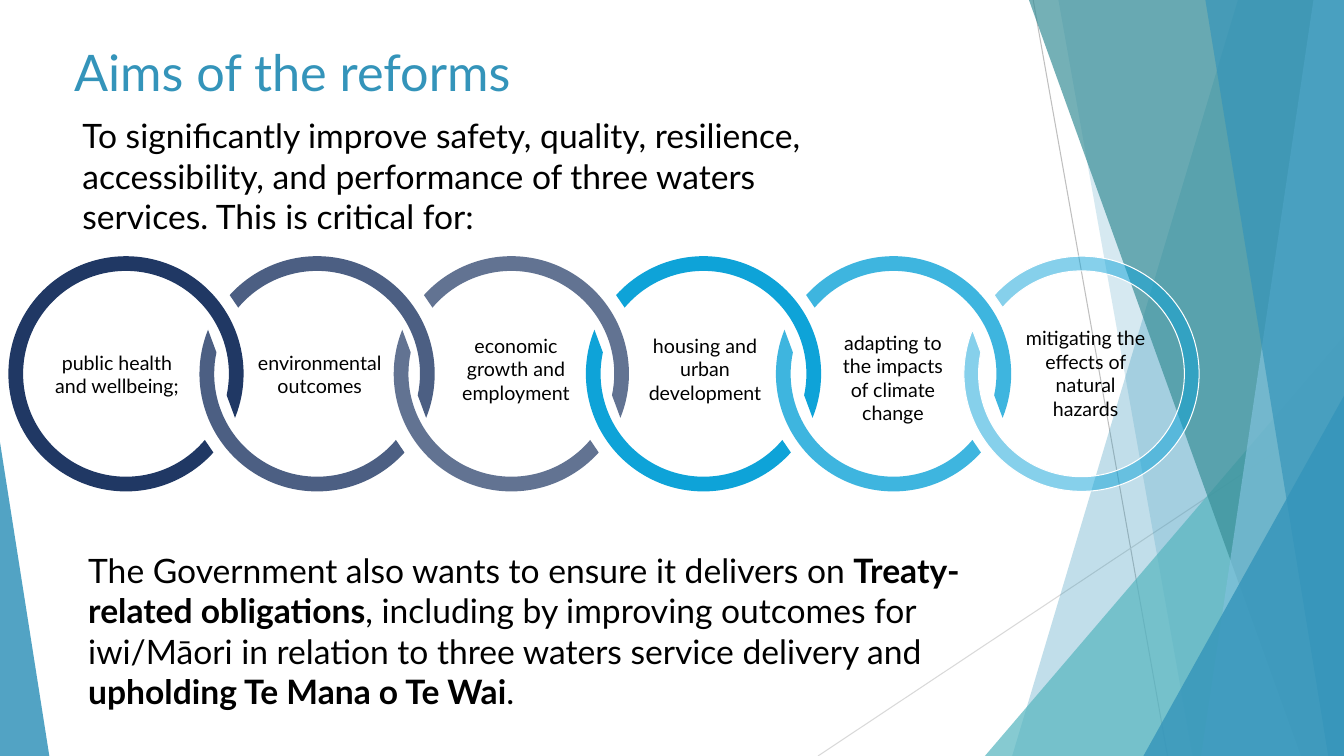
from math import cos, radians, sin

from lxml import etree
from pptx import Presentation
from pptx.dml.color import RGBColor
from pptx.enum.shapes import MSO_CONNECTOR as LINE, MSO_SHAPE as SHAPE
from pptx.enum.text import MSO_ANCHOR as ANCHOR, MSO_AUTO_SIZE as AUTO, PP_ALIGN as ALIGN
from pptx.oxml.ns import qn
from pptx.util import Pt

PX = 9525
WIDE, HIGH = 1280, 720
FONT = "Lato"
COLORS = {
    "blue": "3494BA", "teal": "58B6C0", "deep": "3A8F98", "pale": "7FC1DB",
    "navy": "203864", "sky": "0EA3D8", "black": "000000", "white": "FFFFFF",
    "gray": "BFBFBF", "light": "D9D9D9",
}

TITLE = "Aims of the reforms"
INTRO = [("To significantly improve safety, quality, resilience, accessibility, "
          "and performance of three waters services. This is critical for:", False)]
TREATY = [
    ("The Government also wants to ensure it delivers on ", False),
    ("Treaty-related obligations", True),
    (", including by improving outcomes for iwi/Māori in relation to three waters "
     "service delivery and ", False),
    ("upholding Te Mana o Te Wai", True),
    (".", False),
]
# label, label box, ring centre, colour, opacity
AIMS = [
    ("public health and wellbeing;", (37, 329, 149, 55), 120, "navy", 100),
    ("environmental outcomes", (205, 329, 199, 55), 302, "navy", 80),
    ("economic growth and employment", (417, 313, 149, 78), 487, "navy", 70),
    ("housing and urban development", (605, 313, 133, 78), 670, "sky", 100),
    ("adapting to the impacts of climate change", (789, 310, 123, 100), 851, "sky", 80),
    ("mitigating the effects of natural hazards", (967, 306, 134, 100), 1030, "sky", 50),
]
MID, OUTER, INNER = 356, 112, 98
# Each arc: outer start and end, then inner start and end, in degrees clockwise
FIRST = [(42, 382, 40, 372)]
LINK = [(42, 202, 40, 192), (222, 382, 220, 372)]
LAST = [(222, 562, 220, 552)]

RULES = [((984, 0), (1112, 720), "gray"), ((1280, 387), (779, 720), "light")]
# A band is (top x, bottom x); a wedge is (left, top, width, height, apex)
FACETS = [
    ((1179, 964), "blue", 30),
    ((1008, 1136), "blue", 20),
    ((938, 320, 342, 400, 1), "teal", 72),
    ((980, 1239), "deep", 70),
    ((1251, 1144), "pale", 70),
    ((1148, 1265), "blue", 65),
    ((1089, 377, 191, 343, 1), "blue", 80),
    ((0, 421, 47, 299, 0), "blue", 85),
]


def px(*nums):
    return [round(n * PX) for n in nums]


def rgb(name):
    return RGBColor.from_string(COLORS[name])


def paint(shape, color, alpha):
    """Fill with a colour at an opacity in percent, without line or shadow."""
    shape.shadow.inherit = False
    shape.fill.solid()
    shape.fill.fore_color.rgb = rgb(color)
    shape.line.fill.background()
    if alpha < 100:
        tone = shape.fill._xPr.find(".//" + qn("a:srgbClr"))
        etree.SubElement(tone, qn("a:alpha"), val=str(alpha * 1000))


def outline(shapes, points):
    first, *rest = points
    pen = shapes.build_freeform(*first, scale=PX)
    pen.add_line_segments(rest, close=True)
    return pen.convert_to_shape()


def go(track, verb, angle, size):
    """Move or draw a straight line to the point at an angle on a circle."""
    turn = radians(angle)
    x, y = px(OUTER + size * cos(turn), OUTER + size * sin(turn))
    step = etree.SubElement(track, qn(verb))
    etree.SubElement(step, qn("a:pt"), x=str(x), y=str(y))


def bend(track, start, end, size):
    """Draw an arc between two angles."""
    reach = str(px(size)[0])
    etree.SubElement(track, qn("a:arcTo"), wR=reach, hR=reach,
                     stAng=str(start % 360 * 60000), swAng=str((end - start) * 60000))


def ring(shapes, mid, arcs):
    left, top, right, low = mid - OUTER, MID - OUTER, mid + OUTER, MID + OUTER
    shape = outline(shapes, [(left, top), (right, top), (right, low), (left, low)])
    track = shape._element.spPr.find(".//" + qn("a:path"))
    for step in list(track):
        track.remove(step)
    side = str(px(2 * OUTER)[0])
    track.set("w", side)
    track.set("h", side)
    for start, end, near, far in arcs:
        go(track, "a:moveTo", start, OUTER)
        bend(track, start, end, OUTER)
        go(track, "a:lnTo", far, INNER)
        bend(track, far, near, INNER)
        etree.SubElement(track, qn("a:close"))
    return shape


def write(shape, runs, size=24, color="black", align=ALIGN.LEFT, fit=AUTO.SHAPE_TO_FIT_TEXT):
    frame = shape.text_frame
    frame.word_wrap = True
    frame.auto_size = fit
    frame.vertical_anchor = ANCHOR.TOP
    para = frame.paragraphs[0]
    para.alignment = align
    para.line_spacing = 1.0
    for text, bold in runs:
        run = para.add_run()
        run.text = text
        font = run.font
        font.name, font.size, font.bold = FONT, Pt(size), bold
        font.color.rgb = rgb(color)
    return frame


def backdrop(shapes):
    for start, end, color in RULES:
        rule = shapes.add_connector(LINE.STRAIGHT, *px(*start, *end))
        rule.line.color.rgb = rgb(color)
        rule.line.width = Pt(0.75)
        etree.SubElement(rule._element.spPr, qn("a:effectLst"))
    for form, color, alpha in FACETS:
        if len(form) == 2:
            top, base = form
            facet = outline(shapes, [(top, 0), (WIDE, 0), (WIDE, HIGH), (base, HIGH)])
        else:
            *box, apex = form
            facet = shapes.add_shape(SHAPE.ISOSCELES_TRIANGLE, *px(*box))
            facet.adjustments[0] = apex
        paint(facet, color, alpha)


def main():
    deck = Presentation()
    deck.slide_width, deck.slide_height = px(WIDE, HIGH)
    slide = deck.slides.add_slide(deck.slide_layouts[5])
    shapes = slide.shapes
    backdrop(shapes)

    title = shapes.title
    title.left, title.top, title.width, title.height = px(61, 34, 902, 138)
    write(title, [(TITLE, False)], size=36, color="blue", fit=AUTO.NONE)

    for i, (label, box, mid, color, alpha) in enumerate(AIMS):
        last = i == len(AIMS) - 1
        arcs = FIRST if i == 0 else LAST if last else LINK
        loop = ring(shapes, mid, arcs)
        paint(loop, color, alpha)
        if last:
            loop.line.color.rgb = rgb("white")
            loop.line.width = Pt(0.75)
        write(shapes.add_textbox(*px(*box)), [(label, False)], size=14, align=ALIGN.CENTER)

    write(shapes.add_textbox(*px(69, 105, 764, 126)), INTRO)
    frame = write(shapes.add_textbox(*px(69, 519, 919, 165)), TREATY)
    frame.margin_left = px(15)[0]
    deck.save("out.pptx")


if __name__ == "__main__":
    main()
